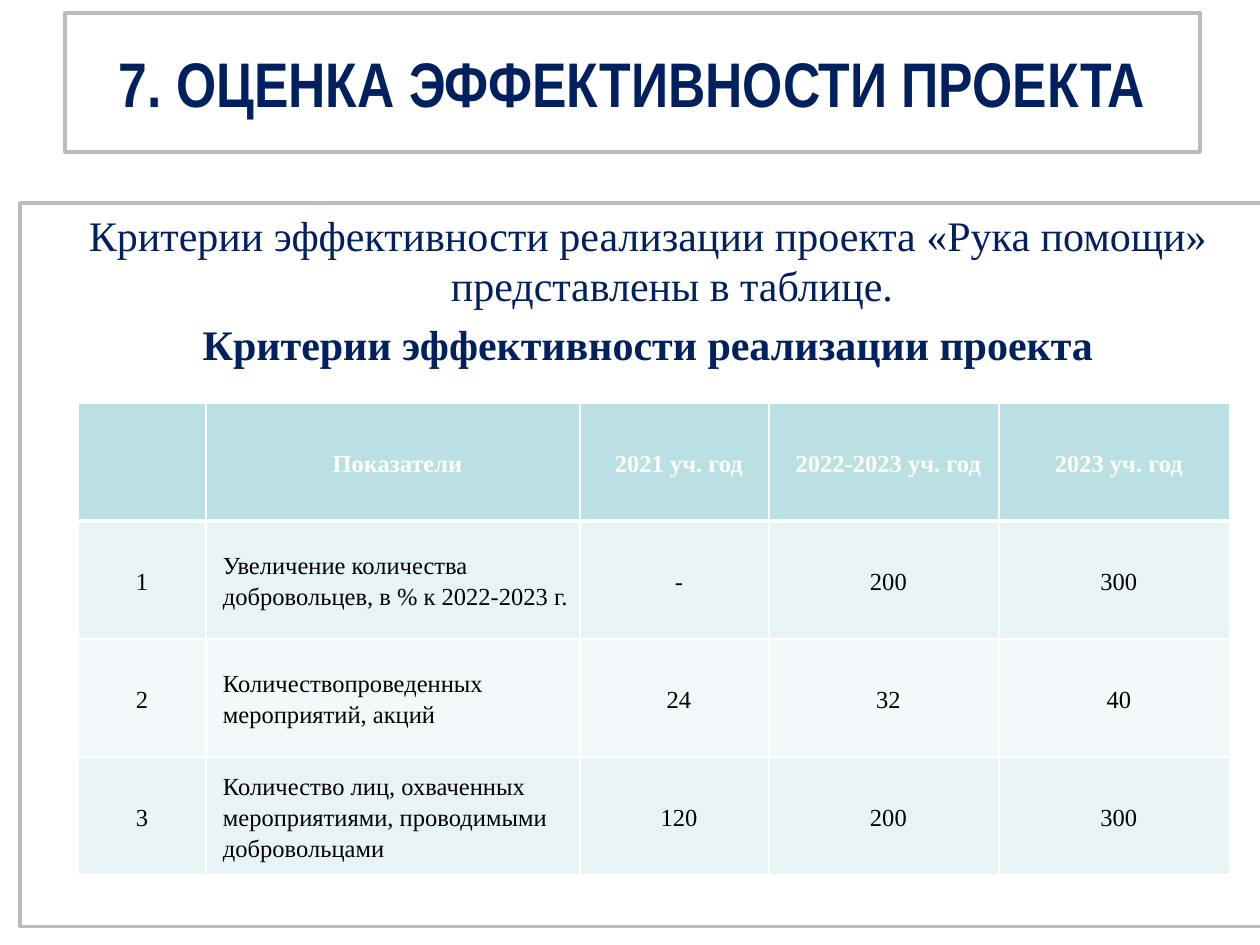
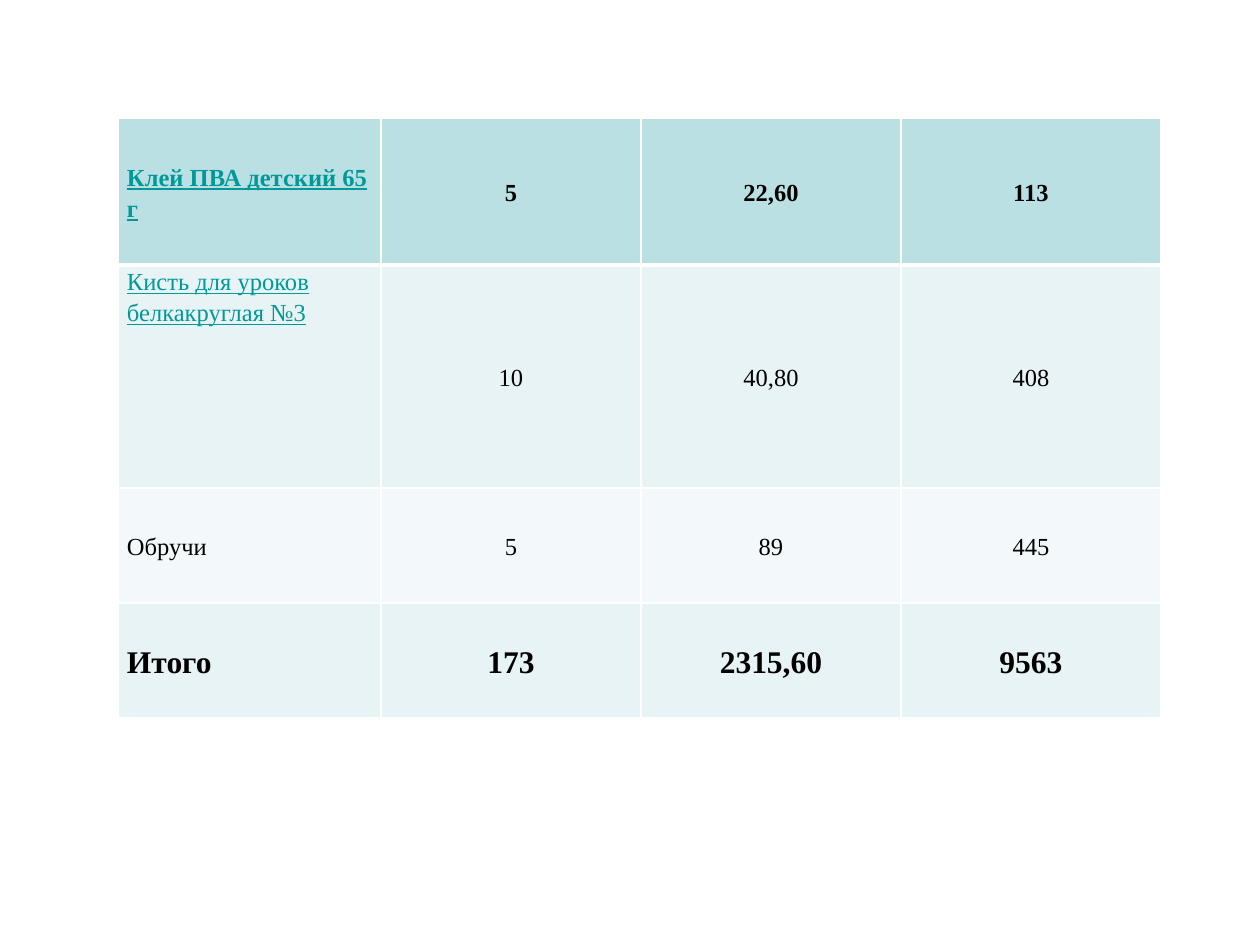
from lxml.etree import SubElement
from pptx import Presentation
from pptx.dml.color import RGBColor
from pptx.enum.text import MSO_ANCHOR, PP_ALIGN
from pptx.oxml.ns import qn
from pptx.util import Emu, Pt

EMU_PER_PX = 914400 / 126
TITLE_ONLY, BLANK = 5, 6
TITLE_FONT, TEXT_FONT = "Arial Narrow", "Times New Roman"
COLOURS = {
    "navy": "002060",
    "white": "FFFFFF",
    "black": "000000",
    "frame": "BBBBBB",
    "link": "009999",
    "header": "BBE0E3",
    "odd_row": "E7F3F4",
    "even_row": "F3F9FA",
}

CRITERIA = [
    ["", "Показатели", "2021 уч. год", "2022-2023 уч. год", "2023 уч. год"],
    ["1", "Увеличение количества добровольцев, в % к 2022-2023 г.", "-", "200", "300"],
    ["2", "Количествопроведенных мероприятий, акций", "24", "32", "40"],
    ["3", "Количество лиц, охваченных мероприятиями, проводимыми добровольцами",
     "120", "200", "300"],
]
EXPENSES = [
    ["Клей ПВА детский 65 г", "5", "22,60", "113"],
    ["Кисть для уроков белкакруглая №3", "10", "40,80", "408"],
    ["Обручи", "5", "89", "445"],
    ["Итого", "173", "2315,60", "9563"],
]


def px(length):
    return Emu(round(length * EMU_PER_PX))


def rgb(name):
    return RGBColor.from_string(COLOURS[name])


def place(shape, left, top, width, height):
    shape.left, shape.top = px(left), px(top)
    shape.width, shape.height = px(width), px(height)


def frame(shape, line_width):
    """Give a text panel its white fill and grey border."""
    shape.fill.solid()
    shape.fill.fore_color.rgb = rgb("white")
    shape.line.color.rgb = rgb("frame")
    shape.line.width = Pt(line_width)


def style(paragraph, size, colour, bold=False, font=TEXT_FONT,
          align=PP_ALIGN.CENTER, underline=False):
    paragraph.alignment = align
    for run in paragraph.runs:
        run.font.name = font
        run.font.size = Pt(size)
        run.font.bold = bold
        run.font.underline = underline
        run.font.color.rgb = rgb(colour)


def indent(paragraph, margin, first_line=0):
    properties = paragraph._p.get_or_add_pPr()
    properties.set("marL", str(px(margin)))
    properties.set("indent", str(px(first_line)))


def add_title(slide, text):
    title = slide.shapes.title
    place(title, 65, 13, 1135, 139)
    frame(title, 2.25)
    title.text_frame.text = text
    title.text_frame.vertical_anchor = MSO_ANCHOR.MIDDLE
    style(title.text_frame.paragraphs[0], 36, "navy", bold=True, font=TITLE_FONT)


def add_introduction(slide, sentence, table_heading):
    panel = slide.shapes.add_textbox(px(20), px(203), px(1256), px(724))
    frame(panel, 1.75)
    text = panel.text_frame
    text.word_wrap = True
    text.text = sentence
    heading = text.add_paragraph()
    heading.text = table_heading
    heading.space_before = Pt(4.8)
    for paragraph in text.paragraphs:
        style(paragraph, 24, "navy", bold=paragraph.text == table_heading)
        indent(paragraph, 48, -48)


def set_borders(cell, top, bottom):
    """Draw white cell borders; top and bottom are widths in points."""
    properties = cell._tc.get_or_add_tcPr()
    for side, width in (("L", 1), ("R", 1), ("T", top), ("B", bottom)):
        border = SubElement(properties, qn(f"a:ln{side}"), w=str(Pt(width)))
        fill = SubElement(border, qn("a:solidFill"))
        SubElement(fill, qn("a:srgbClr"), val=COLOURS["white"])


def add_banded_table(slide, left, top, widths, heights, rows, margins):
    """Add a table with a header fill, alternating rows and white rules."""
    table = slide.shapes.add_table(
        len(rows), len(widths), px(left), px(top), px(sum(widths)), px(sum(heights))
    ).table
    for column, width in zip(table.columns, widths):
        column.width = px(width)
    side_margin, end_margin = margins
    for r, (row, height) in enumerate(zip(rows, heights)):
        table.rows[r].height = px(height)
        band = "header" if r == 0 else "odd_row" if r % 2 else "even_row"
        for c, text in enumerate(row):
            cell = table.cell(r, c)
            cell.text_frame.text = text
            cell.text_frame.paragraphs[0].line_spacing = 1.15
            cell.vertical_anchor = MSO_ANCHOR.MIDDLE
            cell.margin_left = cell.margin_right = px(side_margin)
            cell.margin_top = cell.margin_bottom = px(end_margin)
            set_borders(cell, top=3 if r == 1 else 1, bottom=3 if r == 0 else 1)
            cell.fill.solid()
            cell.fill.fore_color.rgb = rgb(band)
    return table


def add_criteria_table(slide):
    table = add_banded_table(slide, 78, 403, [128, 374, 189, 230, 231], [118] * 4,
                             CRITERIA, margins=(8, 8))
    for r in range(len(CRITERIA)):
        for c in range(len(CRITERIA[0])):
            paragraph = table.cell(r, c).text_frame.paragraphs[0]
            is_header = r == 0
            is_indicator = c == 1 and not is_header
            style(paragraph, 14, "white" if is_header else "black", bold=is_header,
                  align=PP_ALIGN.LEFT if is_indicator else PP_ALIGN.CENTER)
            if c > 0:
                indent(paragraph, 9)


def add_expenses_table(slide):
    table = add_banded_table(slide, 118, 118, [263, 260, 260, 260],
                             [147, 223, 115, 115], EXPENSES, margins=(9, 0))
    total_row = len(EXPENSES) - 1
    for r in range(len(EXPENSES)):
        for c in range(len(EXPENSES[0])):
            paragraph = table.cell(r, c).text_frame.paragraphs[0]
            is_item = c == 0
            is_link = is_item and r < 2
            style(paragraph, 18 if r == total_row else 14,
                  "link" if is_link else "black", bold=r in (0, total_row),
                  align=PP_ALIGN.LEFT if is_item else PP_ALIGN.CENTER,
                  underline=is_link)
            if is_item:
                paragraph.space_after = Pt(3)
    table.cell(1, 0).vertical_anchor = MSO_ANCHOR.TOP


def main():
    deck = Presentation()
    deck.slide_width, deck.slide_height = px(1260), px(945)

    criteria_slide = deck.slides.add_slide(deck.slide_layouts[TITLE_ONLY])
    add_title(criteria_slide, "7. ОЦЕНКА ЭФФЕКТИВНОСТИ ПРОЕКТА")
    add_introduction(
        criteria_slide,
        "Критерии эффективности реализации проекта «Рука помощи» представлены в таблице.",
        "Критерии эффективности реализации проекта",
    )
    add_criteria_table(criteria_slide)

    expenses_slide = deck.slides.add_slide(deck.slide_layouts[BLANK])
    add_expenses_table(expenses_slide)

    deck.save("out.pptx")


if __name__ == "__main__":
    main()
